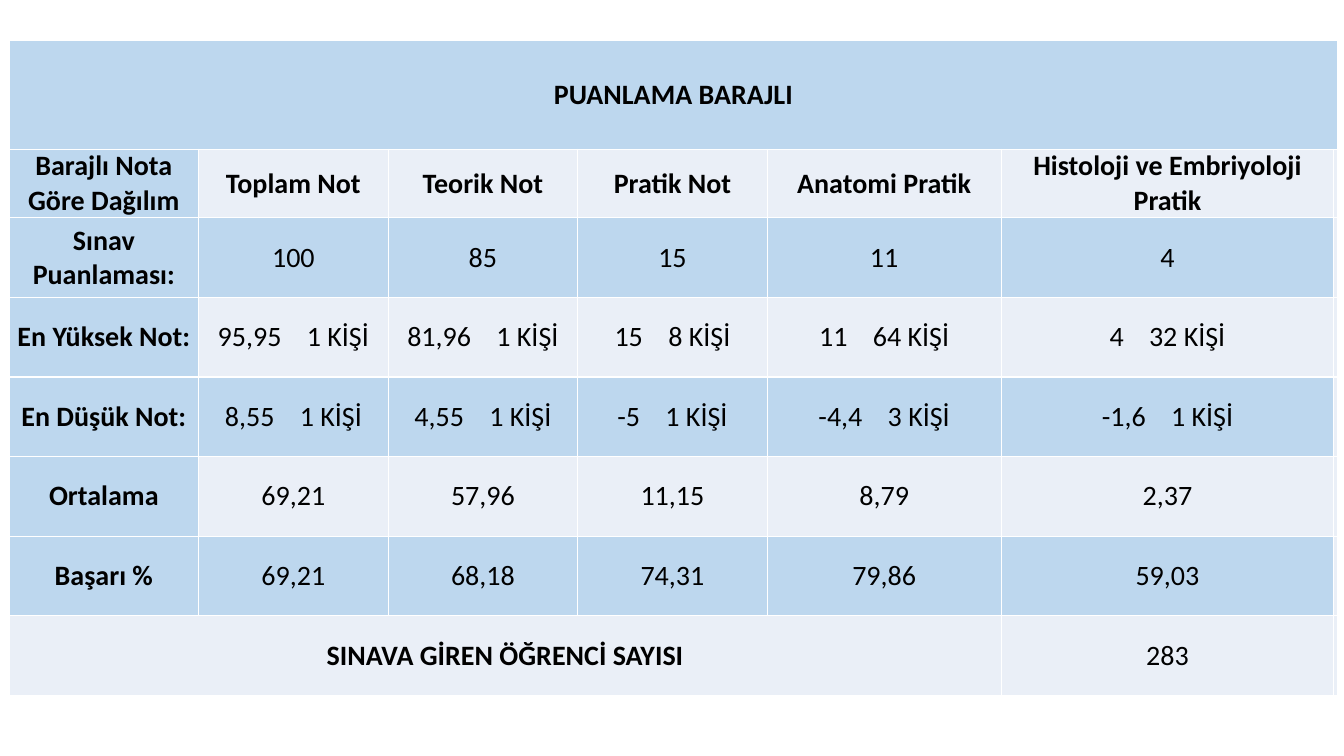
from lxml import etree
from pptx import Presentation
from pptx.dml.color import RGBColor
from pptx.enum.text import MSO_ANCHOR, PP_ALIGN
from pptx.oxml.ns import qn
from pptx.util import Inches, Pt

CENTER = PP_ALIGN.CENTER
MIDDLE = MSO_ANCHOR.MIDDLE
BLUE = RGBColor(0xBD, 0xD7, 0xEE)
PALE = RGBColor(0xEA, 0xEF, 0xF7)
BLACK = RGBColor(0, 0, 0)
WHITE = RGBColor(0xFF, 0xFF, 0xFF)
GAP = "1350"

COLS = [1.88, 1.88, 1.88, 1.88, 2.32, 3.3, 0.04]
ROWS = [1.08, 0.61] + [0.79] * 6
DATA = [
    ["PUANLAMA BARAJLI"],
    ["Barajlı Nota Göre Dağılım", "Toplam Not", "Teorik Not", "Pratik Not",
     "Anatomi Pratik", "Histoloji ve Embriyoloji Pratik"],
    ["Sınav Puanlaması:", "100", "85", "15", "11", "4"],
    ["En Yüksek Not:", ("95,95", "1 KİŞİ"), ("81,96", "1 KİŞİ"),
     ("15", "8 KİŞİ"), ("11", "64 KİŞİ"), ("4", "32 KİŞİ")],
    ["En Düşük Not:", ("8,55", "1 KİŞİ"), ("4,55", "1 KİŞİ"),
     ("-5", "1 KİŞİ"), ("-4,4", "3 KİŞİ"), ("-1,6", "1 KİŞİ")],
    ["Ortalama", "69,21", "57,96", "11,15", "8,79", "2,37"],
    ["Başarı %", "69,21", "68,18", "74,31", "79,86", "59,03"],
    ["SINAVA GİREN ÖĞRENCİ SAYISI", "", "", "", "", "283"],
]


def add_text(p, text, size=20, bold=False, color=BLACK, font="Calibri"):
    r = p.add_run()
    r.text = text
    r.font.size = Pt(size)
    r.font.bold = bold
    r.font.color.rgb = color
    r.font.name = font
    return r


def add_borders(cell, color=WHITE, width=1):
    tcPr = cell._tc.get_or_add_tcPr()
    for i, side in enumerate(("a:lnL", "a:lnR", "a:lnT", "a:lnB")):
        ln = etree.Element(qn(side), w=str(Pt(width)))
        fill = etree.SubElement(ln, qn("a:solidFill"))
        etree.SubElement(fill, qn("a:srgbClr"), val=str(color))
        tcPr.insert(i, ln)


prs = Presentation()
prs.slide_width = Inches(13.33)
prs.slide_height = Inches(7.5)
s = prs.slides.add_slide(prs.slide_layouts[6])

table = s.shapes.add_table(len(ROWS), len(COLS), Inches(0.09), Inches(0.4),
                           Inches(sum(COLS)), Inches(sum(ROWS))).table
for column, width in zip(table.columns, COLS):
    column.width = Inches(width)
for row, height in zip(table.rows, ROWS):
    row.height = Inches(height)

last_row, last_col = len(ROWS) - 1, len(COLS) - 1
table.cell(0, 0).merge(table.cell(0, last_col))
table.cell(last_row, 0).merge(table.cell(last_row, 4))

for i, row in enumerate(table.rows):
    for j, cell in enumerate(row.cells):
        header = j == 0 and i < last_row
        banded = i % 2 == 0 and j < last_col
        cell.fill.solid()
        cell.fill.fore_color.rgb = BLUE if header or banded or i == 0 else PALE
        cell.margin_left = cell.margin_right = 0
        cell.margin_top = cell.margin_bottom = 0
        cell.vertical_anchor = MIDDLE
        add_borders(cell)

    for j, value in enumerate(DATA[i]):
        if not value:
            continue
        p = table.cell(i, j).text_frame.paragraphs[0]
        p.alignment = CENTER
        if isinstance(value, tuple):
            score, people = value
            add_text(p, score)
            add_text(p, " ")._r.get_or_add_rPr().set("spc", GAP)
            add_text(p, people)
        else:
            add_text(p, value, bold=j == 0 or i == 1)

prs.save("out.pptx")
